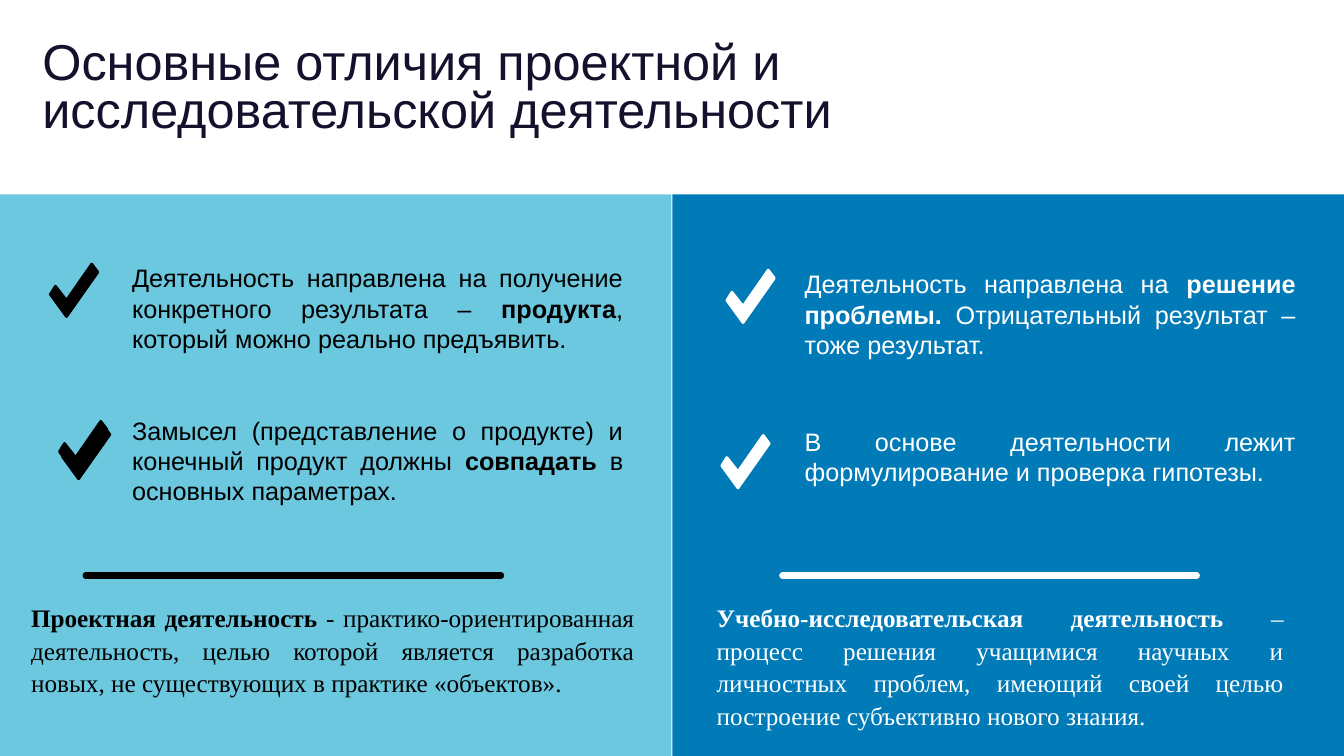
from dataclasses import dataclass

from lxml.etree import SubElement
from pptx import Presentation
from pptx.dml.color import RGBColor
from pptx.enum.shapes import MSO_CONNECTOR, MSO_SHAPE
from pptx.enum.text import MSO_ANCHOR, MSO_AUTO_SIZE, PP_ALIGN
from pptx.oxml.ns import qn
from pptx.util import Inches, Pt


@dataclass(frozen=True)
class Theme:
    black: RGBColor = RGBColor.from_string("000000")
    white: RGBColor = RGBColor.from_string("FFFFFF")
    ink: RGBColor = RGBColor.from_string("14112C")
    light_blue: RGBColor = RGBColor.from_string("6CC8DE")
    dark_blue: RGBColor = RGBColor.from_string("007BB8")
    sans: str = "Arial"
    serif: str = "Times New Roman"
    title_size: Pt = Pt(36)
    body_size: Pt = Pt(18)


THEME = Theme()
NO_TABLE_STYLE = "{2D5ABB26-0587-4C30-8999-92F81FD0307C}"
TICK = [(0.41, 0), (0.47, 0.08), (0.16, 0.52), (0, 0.3), (0.05, 0.22), (0.16, 0.36)]


def write_text(frame, runs, *, color, font=THEME.sans, size=THEME.body_size,
               align=PP_ALIGN.JUSTIFY, line_spacing=1.07, space_after=Pt(8)):
    """Fill the first paragraph with (text, bold) runs."""
    frame.word_wrap = True
    para = frame.paragraphs[0]
    para.alignment = align
    para.line_spacing = line_spacing
    para.space_before = Pt(0)
    para.space_after = space_after
    for text, bold in runs:
        span = para.add_run()
        span.text = text
        span.font.name = font
        span.font.size = size
        span.font.bold = bold
        span.font.color.rgb = color


def round_line(shape, color, width):
    """Give a shape or connector a solid line with round caps and joins."""
    shape.line.color.rgb = color
    shape.line.width = width
    outline = shape.line._get_or_add_ln()
    outline.set("cap", "rnd")
    SubElement(outline, qn("a:round"))


deck = Presentation()
deck.slide_width = Inches(13.33)
deck.slide_height = Inches(7.5)
slide = deck.slides.add_slide(deck.slide_layouts[5])
shapes = slide.shapes

title = shapes.title
title.left, title.top = Inches(0.32), Inches(0.36)
title.width, title.height = Inches(8.34), Inches(1.07)
title.text_frame.vertical_anchor = MSO_ANCHOR.TOP
title.text_frame.auto_size = MSO_AUTO_SIZE.SHAPE_TO_FIT_TEXT
write_text(title.text_frame,
           [("Основные отличия проектной и исследовательской деятельности", False)],
           color=THEME.ink, size=THEME.title_size, align=PP_ALIGN.LEFT,
           line_spacing=0.8, space_after=Pt(0))

columns = [
    {
        "panel_left": -0.01, "fill": THEME.light_blue, "color": THEME.black,
        "rule": (0.85, 4.97),
        "ticks": [(0.5, 2.62), (0.59, 4.18), (0.62, 4.23)],
        "text_left": 1.24,
        "points": [
            (2.61, 0.96, [
                ("Деятельность направлена на получение конкретного результата – ", False),
                ("продукта", True),
                (", который можно реально предъявить.", False)]),
            (4.12, 0.96, [
                ("Замысел (представление о продукте) и конечный продукт должны ", False),
                ("совпадать", True),
                (" в основных параметрах.", False)]),
        ],
        "definition_at": (0.21, 6.18, 1.06),
        "definition": [
            ("Проектная деятельность ", True),
            ("- практико-ориентированная деятельность, целью которой является "
             "разработка новых, не существующих в практике «объектов».", False)],
    },
    {
        "panel_left": 6.67, "fill": THEME.dark_blue, "color": THEME.white,
        "rule": (7.76, 11.87),
        "ticks": [(7.21, 2.68), (7.16, 4.32)],
        "text_left": 7.91,
        "points": [
            (2.67, 0.96, [
                ("Деятельность направлена на ", False),
                ("решение проблемы.", True),
                (" Отрицательный результат – тоже результат.", False)]),
            (4.23, 0.64, [
                ("В основе деятельности лежит формулирование и проверка гипотезы.", False)]),
        ],
        "definition_at": (7.01, 5.82, 1.38),
        "definition": [
            ("Учебно-исследовательская деятельность ", True),
            ("– процесс решения учащимися научных и личностных проблем, "
             "имеющий своей целью построение субъективно нового знания.", False)],
    },
]

for column in columns:
    color = column["color"]

    panel = shapes.add_shape(MSO_SHAPE.RECTANGLE, Inches(column["panel_left"]),
                             Inches(1.93), Inches(6.67), Inches(5.57))
    panel.shadow.inherit = False
    panel.fill.solid()
    panel.fill.fore_color.rgb = column["fill"]
    panel.line.fill.background()

    start, end = column["rule"]
    rule = shapes.add_connector(MSO_CONNECTOR.STRAIGHT, Inches(start), Inches(5.71),
                                Inches(end), Inches(5.71))
    round_line(rule, color, Pt(4.5))
    SubElement(rule._element.spPr, qn("a:effectLst"))

    for left, top in column["ticks"]:
        corners = [(Inches(left + x), Inches(top + y)) for x, y in TICK]
        outline = shapes.build_freeform(*corners[0])
        outline.add_line_segments(corners[1:], close=True)
        tick = outline.convert_to_shape()
        tick.shadow.inherit = False
        tick.fill.solid()
        tick.fill.fore_color.rgb = color
        round_line(tick, color, Pt(2))

    for top, height, runs in column["points"]:
        frame = shapes.add_table(1, 1, Inches(column["text_left"]), Inches(top),
                                 Inches(5.01), Inches(height))
        table = frame.table
        table.first_row = table.horz_banding = False
        table._tbl.tblPr.find(qn("a:tableStyleId")).text = NO_TABLE_STYLE
        cell = table.cell(0, 0)
        cell.fill.background()
        cell.margin_left = cell.margin_right = Inches(0.07)
        cell.margin_top = cell.margin_bottom = 0
        write_text(cell.text_frame, runs, color=color)

    left, width, height = column["definition_at"]
    box = shapes.add_textbox(Inches(left), Inches(5.91), Inches(width), Inches(height))
    box.text_frame.auto_size = MSO_AUTO_SIZE.SHAPE_TO_FIT_TEXT
    # The bold term on the right panel stays black-free: it follows the column colour.
    write_text(box.text_frame, column["definition"], color=color, font=THEME.serif)

deck.save("out.pptx")
